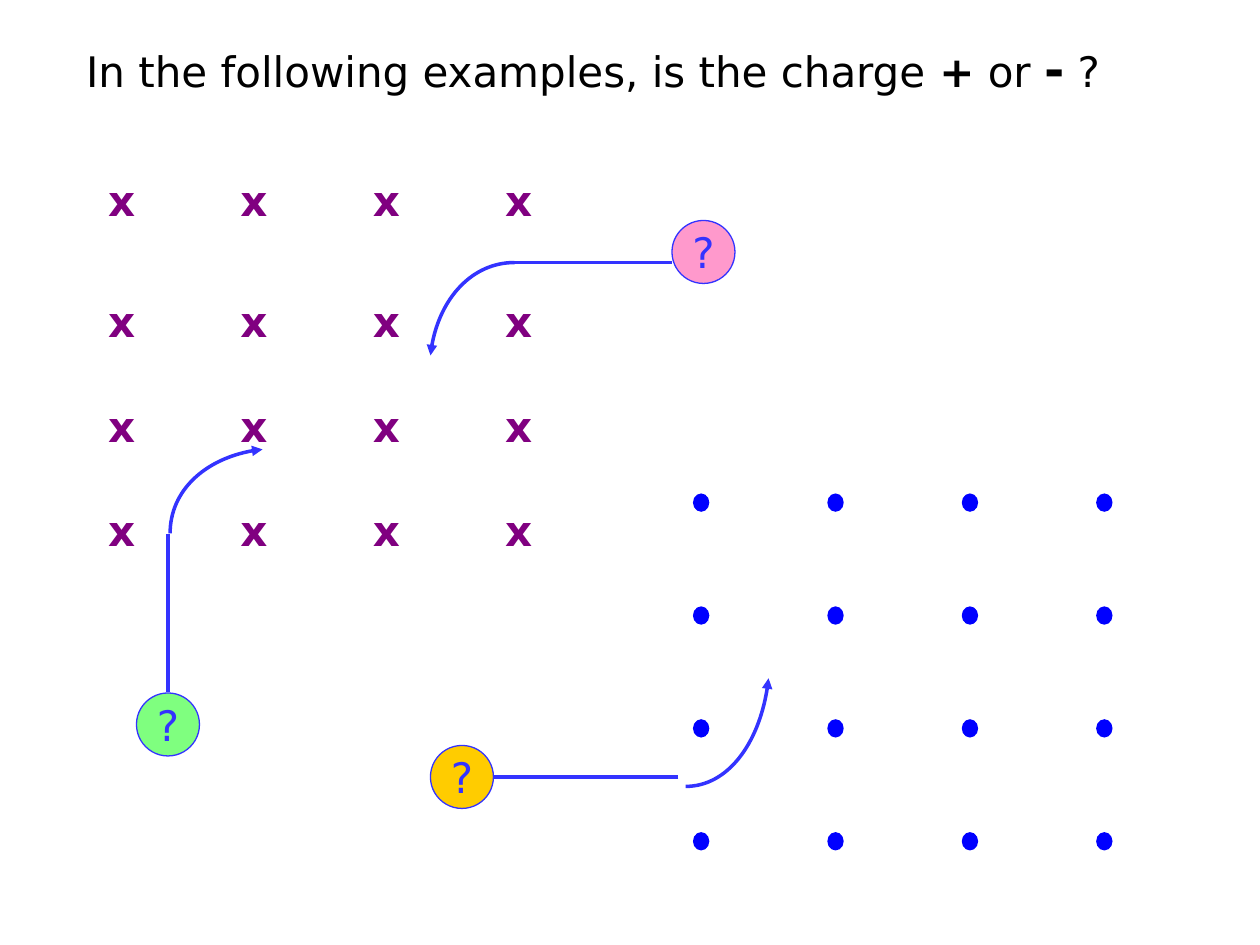
from lxml import etree
from pptx import Presentation
from pptx import util as u
from pptx.dml.color import RGBColor
from pptx.enum import shapes, text
from pptx.oxml.ns import qn

COLORS = {
    "title": "000000", "cross": "800080", "dot": "0000FF", "path": "3333FF",
    "pink": "FF99CC", "green": "00FF00", "gold": "FFCC00",
}
COLUMNS, ROWS = 120, 90
BALL = 6


class Sketch:
    font = "DejaVu Sans"
    size = 24

    def __init__(self, deck):
        self.cell_width = deck.slide_width / COLUMNS
        self.cell_height = deck.slide_height / ROWS
        self.slide = deck.slides.add_slide(deck.slide_layouts[5])
        self.group = None

    def start_group(self):
        self.group = self.slide.shapes.add_group_shape().shapes

    def place(self, column, row):
        return u.Emu(round(column * self.cell_width)), u.Emu(round(row * self.cell_height))

    def color(self, name):
        return RGBColor.from_string(COLORS[name])

    def format_span(self, span, color, bold=False, size=None):
        span.font.name = self.font
        span.font.size = u.Pt(size or self.size)
        span.font.bold = bold
        span.font.color.rgb = self.color(color)

    def title(self, column, row, width, height, pieces):
        box = self.slide.shapes.title
        box.left, box.top = self.place(column, row)
        box.width, box.height = self.place(width, height)
        frame = box.text_frame
        frame.auto_size = text.MSO_AUTO_SIZE.NONE
        frame.vertical_anchor = text.MSO_ANCHOR.BOTTOM
        para = frame.paragraphs[0]
        para.alignment = text.PP_ALIGN.LEFT
        para.line_spacing = 1.0
        para.space_before = u.Pt(0)
        for words, bold, size in pieces:
            span = para.add_run()
            span.text = words
            self.format_span(span, "title", bold, size)

    def label(self, column, row, width, words, color, bold=False):
        box = self.group.add_textbox(*self.place(column, row), *self.place(width, BALL))
        frame = box.text_frame
        frame.word_wrap = True
        frame.text = words
        para = frame.paragraphs[0]
        para.alignment = text.PP_ALIGN.CENTER
        self.format_span(para.runs[0], color, bold)

    def ellipse(self, column, row, width, height, fill, line=None, opacity=100):
        oval = self.group.add_shape(
            shapes.MSO_SHAPE.OVAL, *self.place(column, row), *self.place(width, height))
        oval.shadow.inherit = False
        oval.fill.solid()
        oval.fill.fore_color.rgb = self.color(fill)
        if opacity < 100:
            tint = oval._element.spPr.find(qn("a:solidFill"))[0]
            etree.SubElement(tint, qn("a:alpha"), val=str(opacity * 1000))
        if line:
            oval.line.color.rgb = self.color(line)
            oval.line.width = u.Pt(0.75)
        else:
            oval.line.fill.background()

    def charge(self, column, row, fill, opacity=100):
        self.ellipse(column, row, BALL, BALL, fill, "path", opacity)
        self.label(column, row, BALL, "?", "path")

    def straight(self, start, end):
        track = self.group.add_connector(
            shapes.MSO_CONNECTOR.STRAIGHT, *self.place(*start), *self.place(*end))
        track.line.color.rgb = self.color("path")
        track.line.width = u.Pt(2)
        etree.SubElement(track._element.spPr, qn("a:effectLst"))

    def curve(self, tip, *controls_and_tail):
        points = [self.place(*point) for point in controls_and_tail]
        builder = self.group.build_freeform(*self.place(*tip))
        builder.add_line_segments([points[-1]], close=False)
        bend = builder.convert_to_shape()
        bend.shadow.inherit = False
        bend.fill.background()
        bend.line.color.rgb = self.color("path")
        bend.line.width = u.Pt(2)
        etree.SubElement(bend.line._get_or_add_ln(), qn("a:headEnd"), type="triangle")
        segment = next(bend._element.iter(qn("a:lnTo")))
        cubic = etree.Element(qn("a:cubicBezTo"))
        for x, y in points:
            etree.SubElement(cubic, qn("a:pt"), x=str(x - bend.left), y=str(y - bend.top))
        segment.getparent().replace(segment, cubic)


def main():
    deck = Presentation()
    deck.slide_width, deck.slide_height = u.Inches(10), u.Inches(7.5)
    sketch = Sketch(deck)
    sketch.title(7, 3, 113, 6.84, [
        ("In the following examples, is the charge ", False, 24),
        ("+", True, 24), (" or ", False, 24), ("-", True, 28), (" ?", False, 24)])

    sketch.start_group()
    for row in (16, 27.6, 37.6, 47.5):
        for column in range(4):
            sketch.label(8 + 12.6 * column, row, 7.2, "x", "cross", bold=True)

    sketch.start_group()
    for row in range(4):
        for column in range(4):
            sketch.ellipse(66 + 12.8 * column, 47 + 10.75 * row, 1.56, 1.75, "dot")

    sketch.start_group()
    sketch.curve((41, 33.85), (41.5, 28.8), (45, 25), (49, 25))
    sketch.straight((49, 25), (64, 25))
    sketch.charge(64, 21, "pink")

    sketch.start_group()
    sketch.charge(13, 66, "green", opacity=50)
    sketch.curve((25, 42.8), (20, 43.3), (16.2, 46.7), (16.2, 50.8))
    sketch.straight((16, 50.9), (16, 65.9))

    sketch.start_group()
    sketch.curve((73.2, 64.6), (72.6, 70.4), (69.3, 74.9), (65.3, 74.9))
    sketch.straight((64.6, 74), (47, 74))
    sketch.charge(41, 71, "gold")

    deck.save("out.pptx")


if __name__ == "__main__":
    main()
